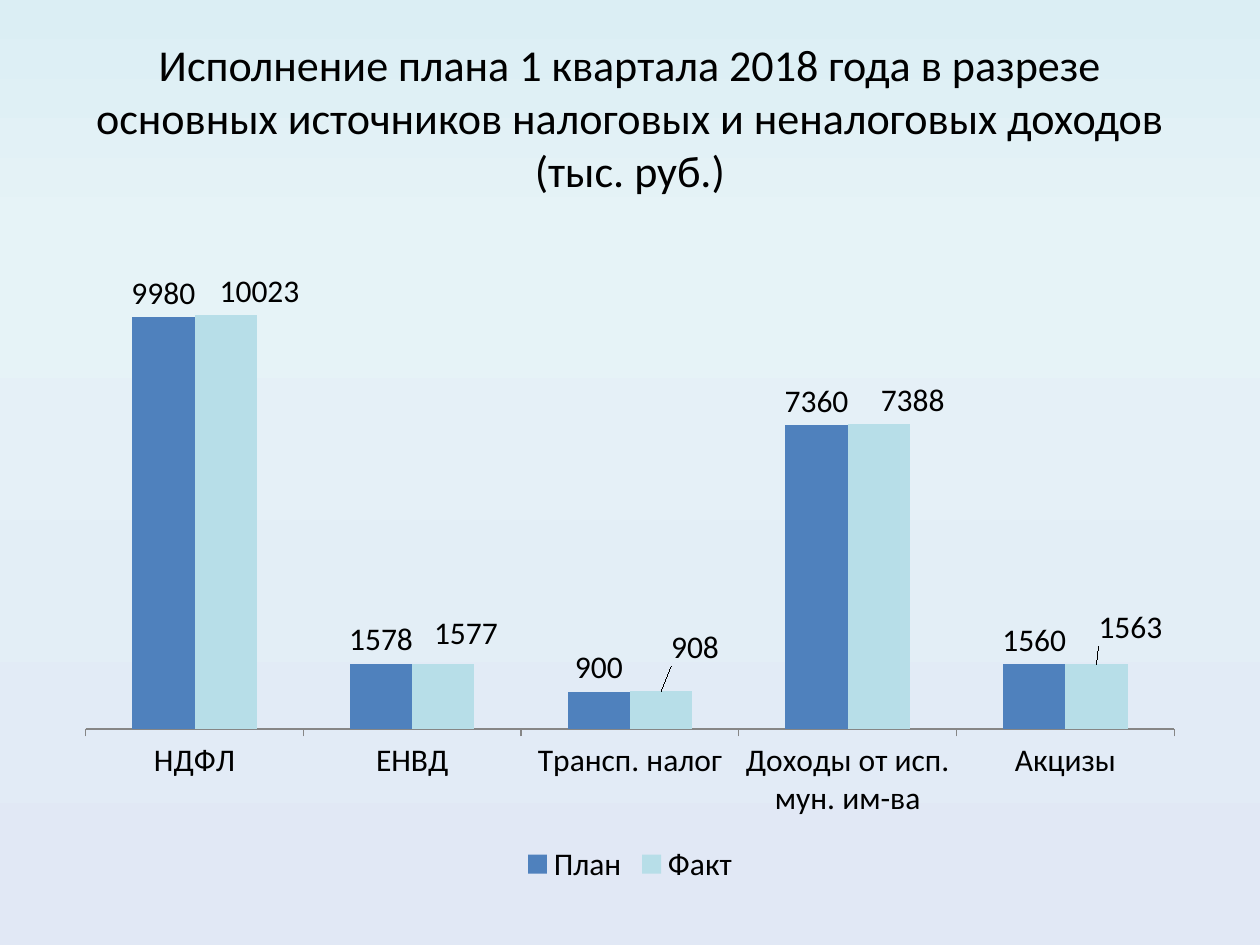
from copy import deepcopy

from lxml import etree
from pptx import Presentation
from pptx.chart.data import CategoryChartData
from pptx.dml.color import RGBColor
from pptx.enum.chart import (XL_CHART_TYPE, XL_LABEL_POSITION,
                             XL_LEGEND_POSITION, XL_TICK_MARK)
from pptx.enum.text import MSO_ANCHOR, MSO_AUTO_SIZE, PP_ALIGN
from pptx.oxml.ns import qn
from pptx.util import Pt

COLUMNS = XL_CHART_TYPE.COLUMN_CLUSTERED
OUTSIDE = XL_LABEL_POSITION.OUTSIDE_END
BOTTOM = XL_LEGEND_POSITION.BOTTOM
TICK_OUT = XL_TICK_MARK.OUTSIDE
MIDDLE = MSO_ANCHOR.MIDDLE
NO_FIT = MSO_AUTO_SIZE.NONE
CENTER = PP_ALIGN.CENTER

BLACK = RGBColor(0x00, 0x00, 0x00)
AXIS_GRAY = RGBColor(0x86, 0x86, 0x86)
PLAN_BLUE = RGBColor(0x4F, 0x81, 0xBD)
FACT_BLUE = RGBColor(0xB7, 0xDE, 0xE8)
BACKGROUND = [(0, RGBColor(0xDB, 0xEE, 0xF4)),
              (0.25, RGBColor(0xE6, 0xF3, 0xF7)),
              (1, RGBColor(0xE1, 0xE8, 0xF5))]
FONT = "Calibri"

TITLE = ("Исполнение плана 1 квартала 2018 года в разрезе основных "
         "источников налоговых и неналоговых доходов (тыс. руб.)")
CATEGORIES = ["НДФЛ", "ЕНВД", "Трансп. налог",
              "Доходы от исп. мун. им-ва", "Акцизы"]
SERIES = [("План", [9980, 1578, 900, 7360, 1560], PLAN_BLUE),
          ("Факт", [10023, 1577, 908, 7388, 1563], FACT_BLUE)]
FACT_LABEL_SHIFTS = [(0.03, 0), (0.02, -0.01), (0.03, -0.03),
                     (0.03, 0), (0.03, -0.02)]


def style_font(font, size):
    font.name = FONT
    font.size = Pt(size)
    font.color.rgb = BLACK


def paint_background(s):
    fill = s.background.fill
    fill.gradient()
    fill.gradient_angle = 270
    first = s._element.find(".//" + qn("a:gs"))
    first.addnext(deepcopy(first))
    for stop, (position, color) in zip(fill.gradient_stops, BACKGROUND):
        stop.position = position
        stop.color.rgb = color


def place_title(s, left, top, width, height):
    sp = s.shapes.title
    sp.left, sp.top, sp.width, sp.height = map(Pt, (left, top, width, height))
    tf = sp.text_frame
    tf.text = TITLE
    tf.word_wrap = True
    tf.auto_size = NO_FIT
    tf.vertical_anchor = MIDDLE
    p = tf.paragraphs[0]
    p.alignment = CENTER
    style_font(p.font, 25.2)


def add_layout(parent, index, **values):
    layout = parent.find(qn("c:layout"))
    if layout is None:
        layout = etree.Element(qn("c:layout"))
        parent.insert(index, layout)
    manual = etree.SubElement(layout, qn("c:manualLayout"))
    for name, value in values.items():
        etree.SubElement(manual, qn("c:" + name)).set("val", str(value))


def shift_labels(series, shifts):
    for i, (dx, dy) in enumerate(shifts):
        series.points[i].data_label.position = OUTSIDE
    labels = series._element.findall(".//" + qn("c:dLbl"))
    for label, (dx, dy) in zip(labels, shifts):
        add_layout(label, 1, x=dx, y=dy)


def place_chart(s, left, top, width, height):
    data = CategoryChartData()
    data.categories = CATEGORIES
    for name, values, color in SERIES:
        data.add_series(name, values)
    chart = s.shapes.add_chart(COLUMNS, Pt(left), Pt(top), Pt(width),
                               Pt(height), data).chart
    style_font(chart.font, 18)
    chart.has_title = False
    chart.has_legend = True
    chart.legend.position = BOTTOM
    chart.legend.include_in_layout = False

    value_axis = chart.value_axis
    value_axis.visible = False
    value_axis.has_major_gridlines = False
    value_axis.minimum_scale = 0
    value_axis.maximum_scale = 12000
    category_axis = chart.category_axis
    category_axis.major_tick_mark = TICK_OUT
    category_axis.format.line.color.rgb = AXIS_GRAY
    category_axis.format.line.width = Pt(0.75)

    plot = chart.plots[0]
    plot.gap_width = 150
    plot.overlap = 0
    plot.vary_by_categories = False
    for series, (name, values, color) in zip(plot.series, SERIES):
        series.format.fill.solid()
        series.format.fill.fore_color.rgb = color
        series.data_labels.show_value = True
        series.data_labels.position = OUTSIDE
    shift_labels(plot.series[1], FACT_LABEL_SHIFTS)
    add_layout(chart._chartSpace.find(".//" + qn("c:plotArea")), 0,
               layoutTarget="inner", xMode="edge", yMode="edge",
               x=0.02, y=0.02, w=0.96, h=0.74)


def main():
    prs = Presentation()
    prs.slide_width, prs.slide_height = Pt(720), Pt(540)
    s = prs.slides.add_slide(prs.slide_layouts[5])
    paint_background(s)
    place_title(s, 36, 21.6, 648, 90)
    place_chart(s, 36, 126, 648, 382.3)
    prs.save("out.pptx")


if __name__ == "__main__":
    main()
